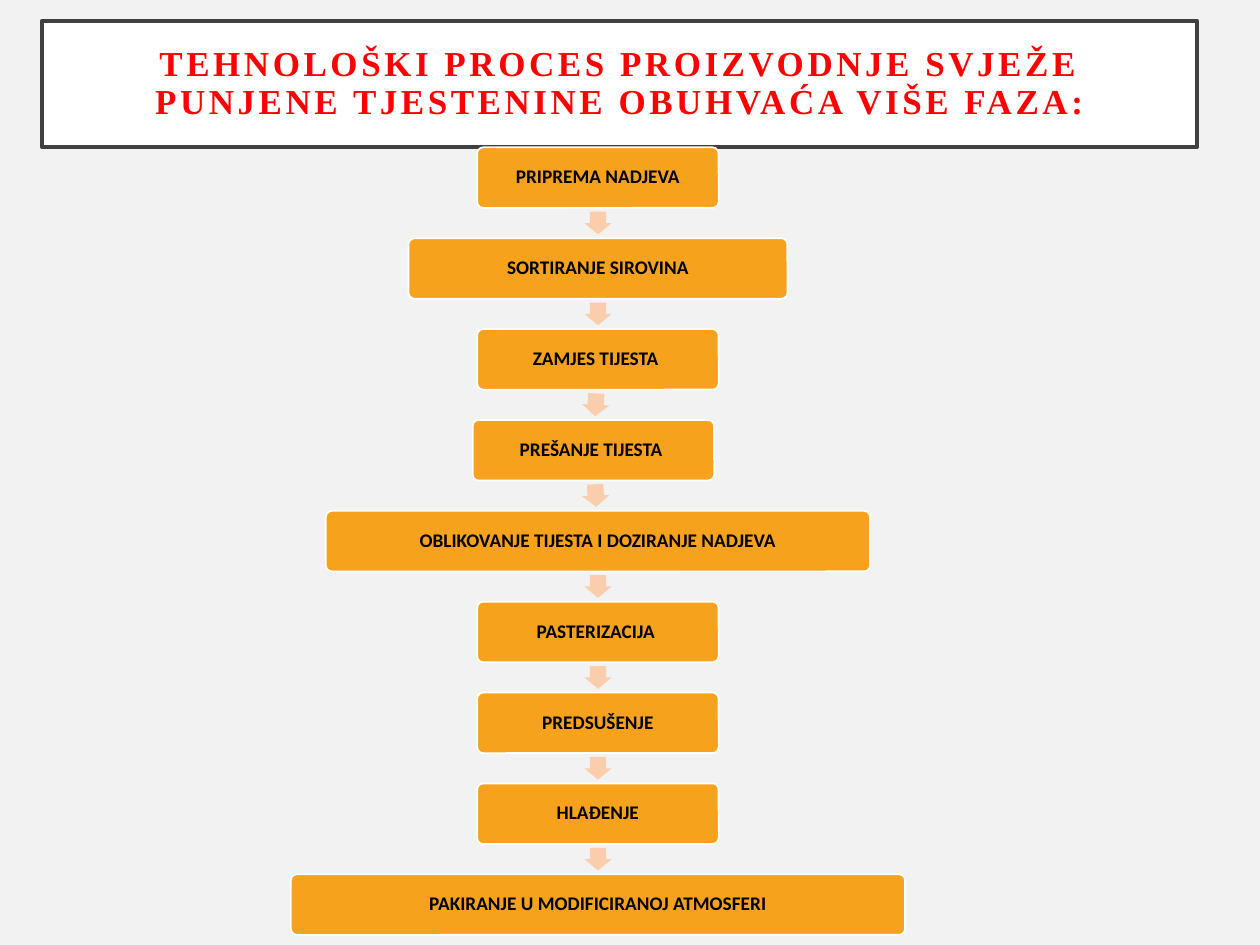
import math

import pptx
import pptx.dml.color
import pptx.enum.shapes
import pptx.enum.text
import pptx.util

Pt = pptx.util.Pt
RGBColor = pptx.dml.color.RGBColor
SHAPE = pptx.enum.shapes.MSO_SHAPE

BACKGROUND = RGBColor(0xF2, 0xF2, 0xF2)
WHITE = RGBColor(0xFF, 0xFF, 0xFF)
BLACK = RGBColor(0, 0, 0)
FRAME = RGBColor(0x40, 0x40, 0x40)
RED = RGBColor(0xFF, 0, 0)
ORANGE = RGBColor(0xF6, 0xA2, 0x1D)
PEACH = RGBColor(0xFA, 0xCE, 0xAC)

TITLE = "TEHNOLOŠKI PROCES PROIZVODNJE SVJEŽE PUNJENE TJESTENINE OBUHVAĆA VIŠE FAZA:"
# Wording, box width and shift from the centre line, in points
PHASES = [
    ("PRIPREMA NADJEVA", 138, 0),
    ("SORTIRANJE SIROVINA", 216.5, 0),
    ("ZAMJES TIJESTA ", 138, 0),
    ("PREŠANJE TIJESTA ", 138, -2.6),
    ("OBLIKOVANJE TIJESTA I DOZIRANJE NADJEVA", 311, 0),
    ("PASTERIZACIJA ", 138, 0),
    ("PREDSUŠENJE", 138, 0),
    ("HLAĐENJE", 138, 0),
    ("PAKIRANJE U MODIFICIRANOJ ATMOSFERI", 351, 0),
]
PHASE_HEIGHT = 34.6
ARROW_LENGTH, ARROW_THICKNESS = 13, 15.6


def add_filled(slide, kind, left, top, width, height, fill):
    shape = slide.shapes.add_shape(kind, Pt(left), Pt(top), Pt(width), Pt(height))
    shape.shadow.inherit = False
    shape.fill.solid()
    shape.fill.fore_color.rgb = fill
    return shape


def set_outline(shape, color, width):
    shape.line.color.rgb = color
    shape.line.width = Pt(width)


def write_centred(shape, wording, font_name, size, color, inset):
    frame = shape.text_frame
    frame.word_wrap = True
    frame.vertical_anchor = pptx.enum.text.MSO_ANCHOR.MIDDLE
    frame.margin_left = frame.margin_right = Pt(inset)
    frame.margin_top = frame.margin_bottom = Pt(inset)
    paragraph = frame.paragraphs[0]
    paragraph.text = wording
    paragraph.alignment = pptx.enum.text.PP_ALIGN.CENTER
    paragraph.line_spacing = 0.9
    font = paragraph.font
    font.name, font.size, font.bold = font_name, Pt(size), True
    font.color.rgb = color
    return paragraph


def add_title(slide, left, top, width, height):
    banner = add_filled(slide, SHAPE.RECTANGLE, left, top, width, height, WHITE)
    set_outline(banner, FRAME, 2.5)
    heading = write_centred(banner, TITLE, "Times New Roman", 20, RED, 14.4)
    heading.runs[0].font._element.set("spc", "200")


def add_phase(slide, wording, centre, top, width):
    phase = add_filled(slide, SHAPE.ROUNDED_RECTANGLE, centre - width / 2, top,
                       width, PHASE_HEIGHT, ORANGE)
    phase.adjustments[0] = 0.1
    set_outline(phase, WHITE, 1)
    write_centred(phase, wording, "Calibri", 11, BLACK, 4.5)


def add_arrow(slide, centre_x, centre_y, angle):
    arrow = add_filled(slide, SHAPE.RIGHT_ARROW, centre_x - ARROW_LENGTH / 2,
                       centre_y - ARROW_THICKNESS / 2,
                       ARROW_LENGTH, ARROW_THICKNESS, PEACH)
    arrow.adjustments[0], arrow.adjustments[1] = 0.6, 0.5
    arrow.line.fill.background()
    arrow.rotation = angle


def add_process(slide, left, top, width, height):
    """Stack the phases evenly in the box, each arrow pointing to the next phase."""
    pitch = (height - PHASE_HEIGHT) / (len(PHASES) - 1)
    middle = left + width / 2
    for index, (wording, phase_width, shift) in enumerate(PHASES):
        phase_top = top + index * pitch
        add_phase(slide, wording, middle + shift, phase_top, phase_width)
        if index + 1 < len(PHASES):
            next_shift = PHASES[index + 1][2]
            angle = 90 - math.degrees(math.atan2(next_shift - shift, pitch))
            add_arrow(slide, middle + (shift + next_shift) / 2,
                      phase_top + (PHASE_HEIGHT + pitch) / 2, angle)


def main():
    presentation = pptx.Presentation()
    presentation.slide_width, presentation.slide_height = Pt(720), Pt(540)
    slide = presentation.slides.add_slide(presentation.slide_layouts[6])
    slide.background.fill.solid()
    slide.background.fill.fore_color.rgb = BACKGROUND
    add_title(slide, 24, 12, 660, 72)
    add_process(slide, 166.2, 84.2, 351, 450)
    presentation.save("out.pptx")


if __name__ == "__main__":
    main()
